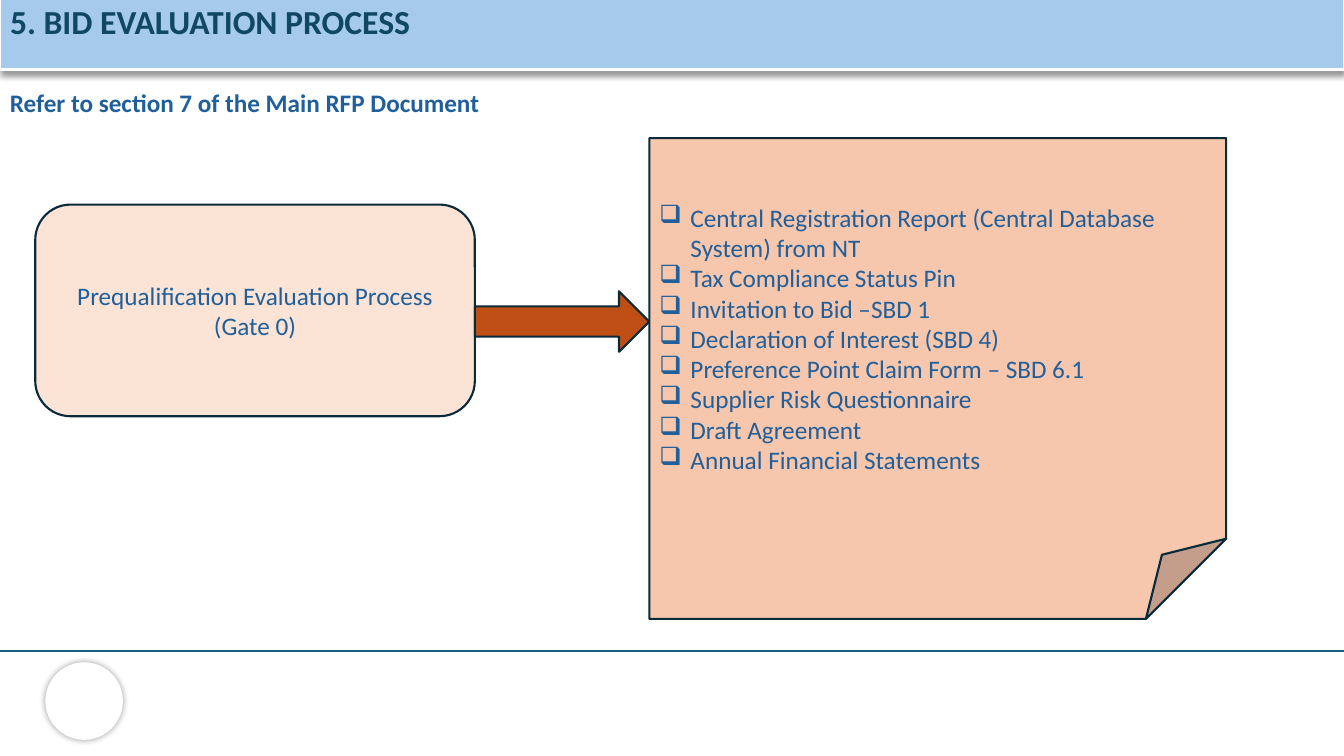
from dataclasses import dataclass
from typing import Optional

from lxml import etree
from pptx import Presentation
from pptx import util as u
from pptx.dml.color import RGBColor
from pptx.enum import shapes, text
from pptx.oxml import ns

NAVY = RGBColor(0x09, 0x2A, 0x39)
TEAL = RGBColor(0x15, 0x60, 0x82)
TITLE = RGBColor(0x10, 0x48, 0x62)
BLUE = RGBColor(0x21, 0x5F, 0x9A)
SKY = RGBColor(0xA6, 0xCA, 0xEC)
PEACH = RGBColor(0xFB, 0xE3, 0xD6)
SALMON = RGBColor(0xF6, 0xC6, 0xAD)
RUST = RGBColor(0xC0, 0x4F, 0x15)
WHITE = RGBColor(0xFF, 0xFF, 0xFF)

WIDTH = 13.33
BULLET_INDENT = 0.31
DOCUMENTS = [
    "Central Registration Report (Central Database System) from NT",
    "Tax Compliance Status Pin",
    "Invitation to Bid –SBD 1",
    "Declaration of Interest (SBD 4)",
    "Preference Point Claim Form – SBD 6.1",
    "Supplier Risk Questionnaire",
    "Draft Agreement",
    "Annual Financial Statements",
]


@dataclass
class Box:
    kind: shapes.MSO_SHAPE
    left: float
    top: float
    width: float
    height: float
    fill: RGBColor
    line: Optional[RGBColor] = NAVY


BADGE = Box(shapes.MSO_SHAPE.OVAL, 0.45, 6.57, 0.77, 0.77, WHITE, None)
GATE = Box(shapes.MSO_SHAPE.ROUNDED_RECTANGLE, 0.35, 2.03, 4.36, 2.1, PEACH)
ARROW = Box(shapes.MSO_SHAPE.RIGHT_ARROW, 4.71, 2.89, 1.73, 0.6, RUST)
NOTE = Box(shapes.MSO_SHAPE.FOLDED_CORNER, 6.44, 1.37, 5.72, 4.77, SALMON)


def add_box(s, box: Box):
    sp = s.shapes.add_shape(box.kind, *map(u.Inches, (box.left, box.top, box.width, box.height)))
    sp.shadow.inherit = False
    sp.fill.solid()
    sp.fill.fore_color.rgb = box.fill
    if box.line is None:
        sp.line.fill.background()
    else:
        sp.line.color.rgb = box.line
        sp.line.width = u.Pt(1.5)
    return sp


def write(tf, *lines: str, size: float = 18, color: RGBColor = BLUE, bold: bool = False,
          align=text.PP_ALIGN.LEFT, bullet: Optional[str] = None) -> None:
    for i, line in enumerate(lines):
        p = tf.paragraphs[0] if i == 0 else tf.add_paragraph()
        p.alignment = align
        if bullet:
            pPr = p._p.get_or_add_pPr()
            pPr.set("marL", str(u.Inches(BULLET_INDENT)))
            pPr.set("indent", str(-u.Inches(BULLET_INDENT)))
            etree.SubElement(pPr, ns.qn("a:buChar")).set("char", bullet)
        r = p.add_run()
        r.text = line
        r.font.name = "Calibri"
        r.font.size = u.Pt(size)
        r.font.bold = bold
        r.font.color.rgb = color


def add_shadow(effects, blur: float, dist: float) -> None:
    shadow = etree.SubElement(effects, ns.qn("a:outerShdw"), blurRad=str(u.Pt(blur)),
                              dist=str(u.Pt(dist)), dir="5400000", rotWithShape="0")
    black = etree.SubElement(shadow, ns.qn("a:srgbClr"), val="000000")
    etree.SubElement(black, ns.qn("a:alpha"), val="40000")


def add_border(tcPr, side: str, width: float) -> None:
    ln = etree.SubElement(tcPr, ns.qn(f"a:{side}"), w=str(u.Pt(width)))
    fill = etree.SubElement(ln, ns.qn("a:solidFill"))
    etree.SubElement(fill, ns.qn("a:srgbClr"), val=str(WHITE))


def add_footer(s) -> None:
    line = s.shapes.add_connector(shapes.MSO_CONNECTOR.STRAIGHT, u.Inches(WIDTH), u.Inches(6.46),
                                  0, u.Inches(6.46))
    line.line.color.rgb = TEAL
    line.line.width = u.Pt(1.5)
    etree.SubElement(line._element.spPr, ns.qn("a:effectLst"))
    badge = add_box(s, BADGE)
    add_shadow(badge._element.spPr.find(ns.qn("a:effectLst")), 5, 0)


def add_header(s) -> None:
    frame = s.shapes.add_table(1, 1, 0, u.Inches(-0.02), u.Inches(WIDTH), u.Inches(0.71))
    table = frame.table
    table.first_row = False
    table.horz_banding = False
    effects = etree.Element(ns.qn("a:effectLst"))
    add_shadow(effects, 4, 3)
    table._tbl.tblPr.insert(0, effects)
    cell = table.cell(0, 0)
    tcPr = cell._tc.get_or_add_tcPr()
    for side, width in (("lnL", 1), ("lnR", 1), ("lnT", 1), ("lnB", 3)):
        add_border(tcPr, side, width)
    cell.fill.solid()
    cell.fill.fore_color.rgb = SKY
    write(cell.text_frame, "5. BID EVALUATION PROCESS", size=24, color=TITLE, bold=True)


def main() -> None:
    prs = Presentation()
    prs.slide_width, prs.slide_height = u.Inches(WIDTH), u.Inches(7.5)
    s = prs.slides.add_slide(prs.slide_layouts[6])
    add_footer(s)

    tf = s.shapes.add_textbox(0, u.Inches(0.82), u.Inches(13.21), u.Inches(0.4)).text_frame
    tf.word_wrap = True
    tf.auto_size = text.MSO_AUTO_SIZE.SHAPE_TO_FIT_TEXT
    write(tf, "Refer to section 7 of the Main RFP Document", bold=True)
    add_header(s)

    gate, _, note = [add_box(s, box) for box in (GATE, ARROW, NOTE)]
    for sp in (gate, note):
        sp.text_frame.vertical_anchor = text.MSO_ANCHOR.MIDDLE
    write(gate.text_frame, "Prequalification Evaluation Process (Gate 0)",
          align=text.PP_ALIGN.CENTER)
    write(note.text_frame, *DOCUMENTS, bullet="❑")

    prs.save("out.pptx")


if __name__ == "__main__":
    main()
